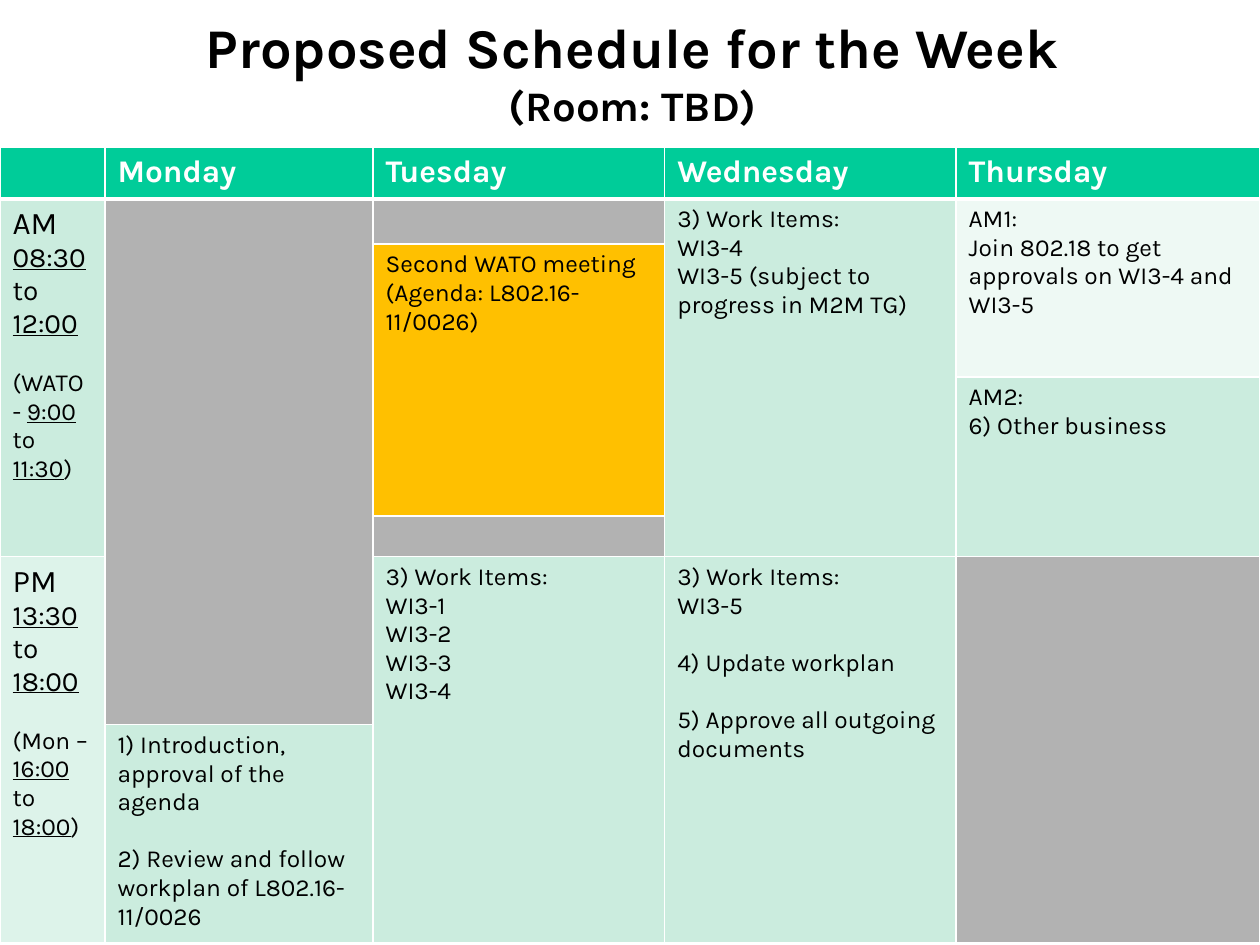
from lxml import etree
from pptx import Presentation
from pptx.dml.color import RGBColor
from pptx.enum import text
from pptx.oxml.ns import qn
from pptx.util import Pt

GREEN, MINT, PALE, PALEST = "00CC99", "CBECDE", "DDF3EA", "EEF9F4"
GREY, AMBER, WHITE, BLACK = "B2B2B2", "FFC000", "FFFFFF", "000000"
LINE_GAP = 16.4  # one line of 14 pt text


def color(h):
    return RGBColor.from_string(h)


def write(tf, content, sizes=(14,), fg=BLACK, bold=False, align=None):
    """Lines split at newlines; a blank line adds space, _x_ underlines x.
    The last size holds for all further lines."""
    p, n, gap = tf.paragraphs[0], 0, 0
    for line in content.split("\n"):
        if not line:
            gap = LINE_GAP
            continue
        if n:
            p = tf.add_paragraph()
        p.alignment = align
        p.space_before = Pt(gap)
        for i, part in enumerate(line.split("_")):
            if part:
                r = p.add_run()
                r.text = part
                r.font.name, r.font.bold = "Karla", bold
                r.font.size = Pt(sizes[min(n, len(sizes) - 1)])
                r.font.underline = i % 2 == 1
                r.font.color.rgb = color(fg)
        n, gap = n + 1, 0


prs = Presentation()
prs.slide_width, prs.slide_height = Pt(720), Pt(540)
s = prs.slides.add_slide(prs.slide_layouts[6])

# Title
tf = s.shapes.add_textbox(Pt(37.5), Pt(3.6), Pt(648), Pt(68.4)).text_frame
tf.word_wrap = True
write(tf, "Proposed Schedule for the Week\n(Room: TBD)", (32, 24),
      bold=True, align=text.PP_ALIGN.CENTER)

# Timetable grid
widths = [60, 153.2, 166.7, 166.5, 173.6]
heights = [29.5, 25.9, 76, 79.2, 23.4, 96, 121.2]
frame = s.shapes.add_table(len(heights), len(widths), Pt(0), Pt(84.2),
                           Pt(sum(widths)), Pt(sum(heights)))
table = frame.table
table.first_row = table.horz_banding = False
for col, w in zip(table.columns, widths):
    col.width = Pt(w)
for row, h in zip(table.rows, heights):
    row.height = Pt(h)

# White borders, thick under the header; small type in empty cells
for r in range(len(heights)):
    for c in range(len(widths)):
        cell = table.cell(r, c)
        pr = cell._tc.get_or_add_tcPr()
        for side in "LRTB":
            thick = (r, side) in ((0, "B"), (1, "T"))
            ln = etree.SubElement(pr, qn("a:ln" + side), w=str(Pt(3 if thick else 1)))
            fill = etree.SubElement(ln, qn("a:solidFill"))
            etree.SubElement(fill, qn("a:srgbClr"), val=WHITE)
        etree.SubElement(cell.text_frame.paragraphs[0]._p,
                         qn("a:endParaRPr"), sz="1200")

# Header row
for c, day in enumerate(["", "Monday", "Tuesday", "Wednesday", "Thursday"]):
    cell = table.cell(0, c)
    cell.fill.solid()
    cell.fill.fore_color.rgb = color(GREEN)
    write(cell.text_frame, day, (18,), WHITE, True)

# Sessions: row, column, rows spanned, fill, text
sessions = [
    (1, 0, 4, MINT, "AM\n_08:30_ to _12:00_\n\n(WATO - _9:00_ to _11:30_)"),
    (5, 0, 2, PALE, "PM\n_13:30_ to _18:00_\n\n(Mon – _16:00_ to _18:00_)"),
    (1, 1, 5, GREY, ""),
    (6, 1, 1, MINT, "1) Introduction, approval of the agenda\n\n"
                    "2) Review and follow workplan of L802.16-11/0026"),
    (1, 2, 1, GREY, ""),
    (2, 2, 2, AMBER, "Second WATO meeting\n(Agenda: L802.16-11/0026)"),
    (4, 2, 1, GREY, ""),
    (5, 2, 2, MINT, "3) Work Items:\nWI3-1\nWI3-2\nWI3-3\nWI3-4"),
    (1, 3, 4, MINT, "3) Work Items:\nWI3-4\n"
                    "WI3-5 (subject to progress in M2M TG)"),
    (5, 3, 2, MINT, "3) Work Items:\nWI3-5\n\n4) Update workplan\n\n"
                    "5) Approve all outgoing documents"),
    (1, 4, 2, PALEST, "AM1:\nJoin 802.18 to get approvals on WI3-4 and WI3-5"),
    (3, 4, 2, MINT, "AM2:\n6) Other business"),
    (5, 4, 2, GREY, ""),
]
for r, c, span, bg, content in sessions:
    cell = table.cell(r, c)
    if span > 1:
        cell.merge(table.cell(r + span - 1, c))
    for k in range(r, r + span):
        part = table.cell(k, c)
        part.fill.solid()
        part.fill.fore_color.rgb = color(bg)
    write(cell.text_frame, content, (18, 16, 14) if c == 0 else (14,))

prs.save("out.pptx")
